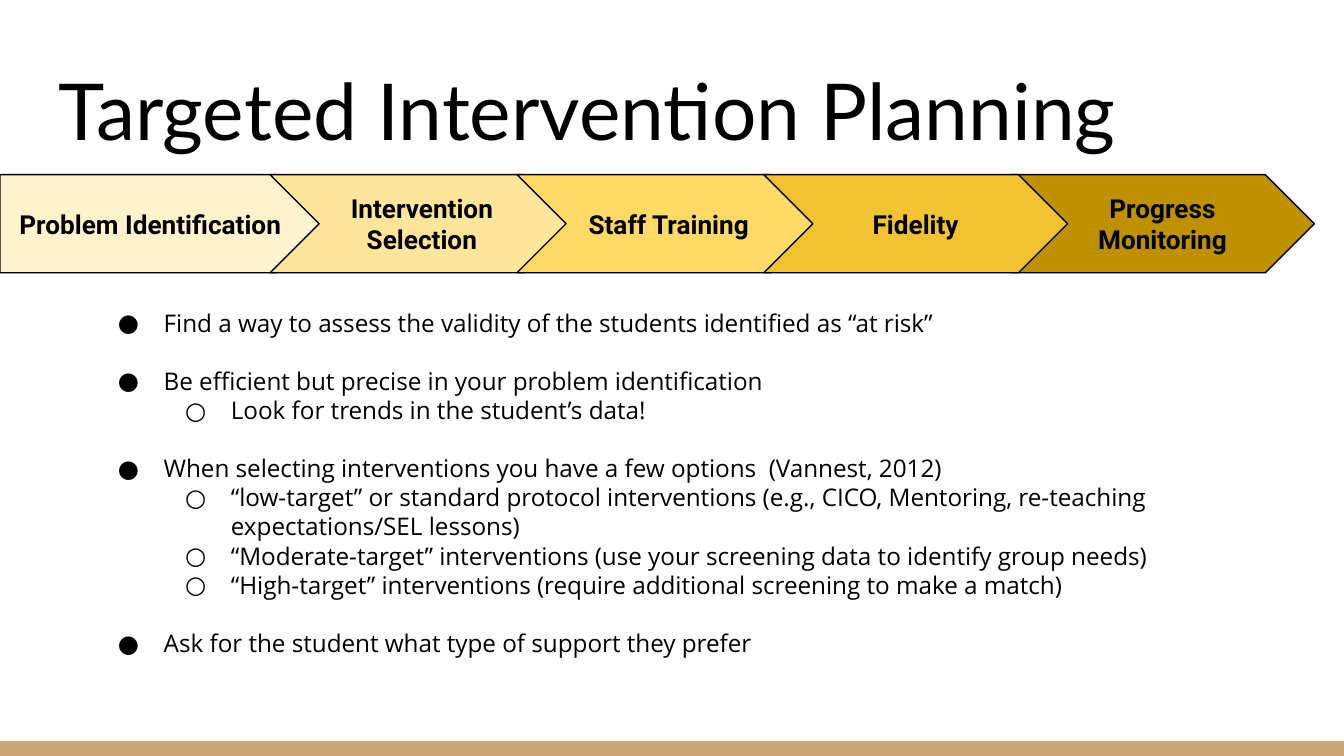
from lxml import etree
from pptx import Presentation
from pptx.dml.color import RGBColor
from pptx.enum.shapes import MSO_SHAPE
from pptx.enum.text import MSO_ANCHOR, MSO_AUTO_SIZE, PP_ALIGN
from pptx.oxml.ns import qn
from pptx.util import Inches, Pt

RECT, PENTAGON, CHEVRON = MSO_SHAPE.RECTANGLE, MSO_SHAPE.PENTAGON, MSO_SHAPE.CHEVRON
TOP, MIDDLE, BOTTOM = MSO_ANCHOR.TOP, MSO_ANCHOR.MIDDLE, MSO_ANCHOR.BOTTOM
CENTER = PP_ALIGN.CENTER
GROW = MSO_AUTO_SIZE.SHAPE_TO_FIT_TEXT

BLACK = RGBColor(0x00, 0x00, 0x00)
TAN = RGBColor(0xCC, 0xA6, 0x77)
CREAM = RGBColor(0xFF, 0xF2, 0xCC)
PALE_GOLD = RGBColor(0xFF, 0xE5, 0x99)
LIGHT_GOLD = RGBColor(0xFF, 0xD9, 0x66)
GOLD = RGBColor(0xF1, 0xC2, 0x32)
DARK_GOLD = RGBColor(0xBF, 0x90, 0x00)

W = Inches(10)
H = W * 9 // 16
MARGIN = Inches(0.1)
BODY_FONT, BODY_SIZE = "Open Sans", 13

# Column, label, fill; Fidelity comes last so that its tip lies on top
STEPS = [
    (0, "Problem Identification", CREAM),
    (1, "Intervention Selection", PALE_GOLD),
    (2, "Staff Training", LIGHT_GOLD),
    (4, "Progress Monitoring", DARK_GOLD),
    (3, "Fidelity", GOLD),
]

# Level, text, whether it opens a new group
POINTS = [
    (0, "Find a way to assess the validity of the students identified as “at risk”", False),
    (0, "Be efficient but precise in your problem identification", True),
    (1, "Look for trends in the student’s data!", False),
    (0, "When selecting interventions you have a few options  (Vannest, 2012)", True),
    (1, "“low-target” or standard protocol interventions (e.g., CICO, Mentoring, "
        "re-teaching expectations/SEL lessons)", False),
    (1, "“Moderate-target” interventions (use your screening data to identify group needs)", False),
    (1, "“High-target” interventions (require additional screening to make a match)", False),
    (0, "Ask for the student what type of support they prefer", True),
]


def set_frame(tf, anchor):
    tf.word_wrap = True
    tf.vertical_anchor = anchor
    tf.margin_left = tf.margin_right = tf.margin_top = tf.margin_bottom = MARGIN


def set_text(p, text, font, size, bold=False):
    p.text = text
    for r in p.runs:
        r.font.name, r.font.size, r.font.bold = font, Pt(size), bold
        r.font.color.rgb = BLACK


def set_bullet(p, level):
    p.level = level
    pPr = p._p.get_or_add_pPr()
    pPr.set("marL", str(Inches(0.5) * (level + 1)))
    pPr.set("indent", str(-Inches(0.34)))
    color = etree.SubElement(pPr, qn("a:buClr"))
    etree.SubElement(color, qn("a:srgbClr")).set("val", str(BLACK))
    etree.SubElement(pPr, qn("a:buSzPts")).set("val", str(BODY_SIZE * 100))
    etree.SubElement(pPr, qn("a:buFont")).set("typeface", BODY_FONT)
    etree.SubElement(pPr, qn("a:buChar")).set("char", "●○"[level])


def add_filled(s, kind, x, y, w, h, color):
    sp = s.shapes.add_shape(kind, x, y, w, h)
    sp.shadow.inherit = False
    sp.fill.solid()
    sp.fill.fore_color.rgb = color
    sp.line.fill.background()
    return sp


def add_footer_bar(s, x, y, w, h):
    add_filled(s, RECT, x, y, w, h, TAN)


def add_title(s, x, y, w, h):
    tf = s.shapes.add_textbox(x, y, w, h).text_frame
    set_frame(tf, BOTTOM)
    set_text(tf.paragraphs[0], "Targeted Intervention Planning", "Lato", 42)


def add_process(s, x, y, w, h):
    """The first step is a pentagon; the chevrons follow at an equal pitch."""
    first_w, step_w = Inches(2.42), Inches(2.26)
    start = Inches(2.01)
    pitch = (w - step_w - start) / 3
    for col, label, color in STEPS:
        if col == 0:
            sp = add_filled(s, PENTAGON, x, y, first_w, h, color)
        else:
            left = x + start + int(pitch * (col - 1))
            sp = add_filled(s, CHEVRON, left, y, step_w, h, color)
        sp.adjustments[0] = 0.5
        sp.line.color.rgb = BLACK
        sp.line.width = Pt(0.75)
        set_frame(sp.text_frame, MIDDLE)
        p = sp.text_frame.paragraphs[0]
        set_text(p, label, "Roboto", 14, True)
        p.alignment = CENTER


def add_points(s, x, y, w, h):
    tf = s.shapes.add_textbox(x, y, w, h).text_frame
    set_frame(tf, TOP)
    tf.auto_size = GROW
    for i, (level, text, new_group) in enumerate(POINTS):
        p = tf.add_paragraph() if i else tf.paragraphs[0]
        set_text(p, text, BODY_FONT, BODY_SIZE)
        if new_group:
            p.space_before = Pt(15.6)
        set_bullet(p, level)


def main():
    prs = Presentation()
    prs.slide_width, prs.slide_height = W, H
    s = prs.slides.add_slide(prs.slide_layouts[6])
    bar_h = Inches(0.11)
    add_footer_bar(s, 0, H - bar_h, W, bar_h)
    add_title(s, Inches(0.34), Inches(0.35), Inches(9.32), Inches(0.91))
    add_process(s, 0, Inches(1.3), Inches(9.78), Inches(0.73))
    add_points(s, Inches(0.62), Inches(2.19), Inches(8.6), Inches(2.83))
    prs.save("out.pptx")


if __name__ == "__main__":
    main()
